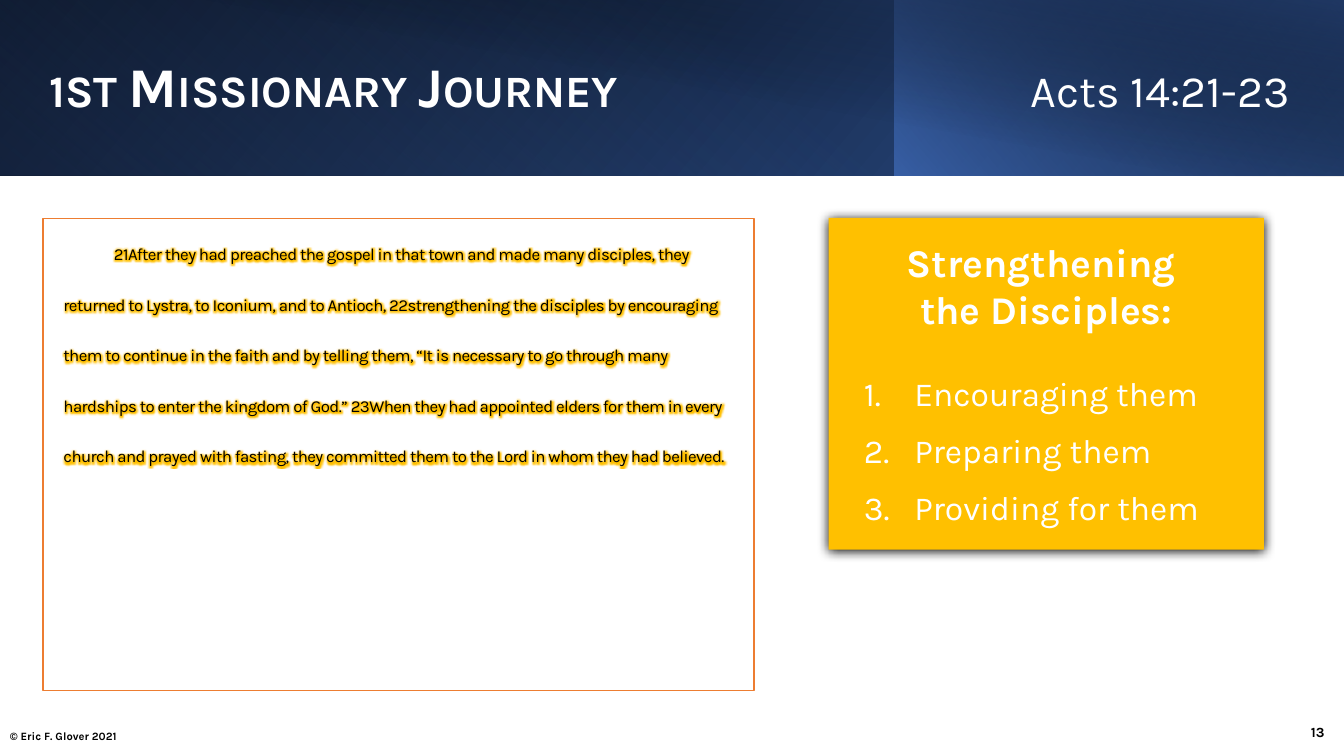
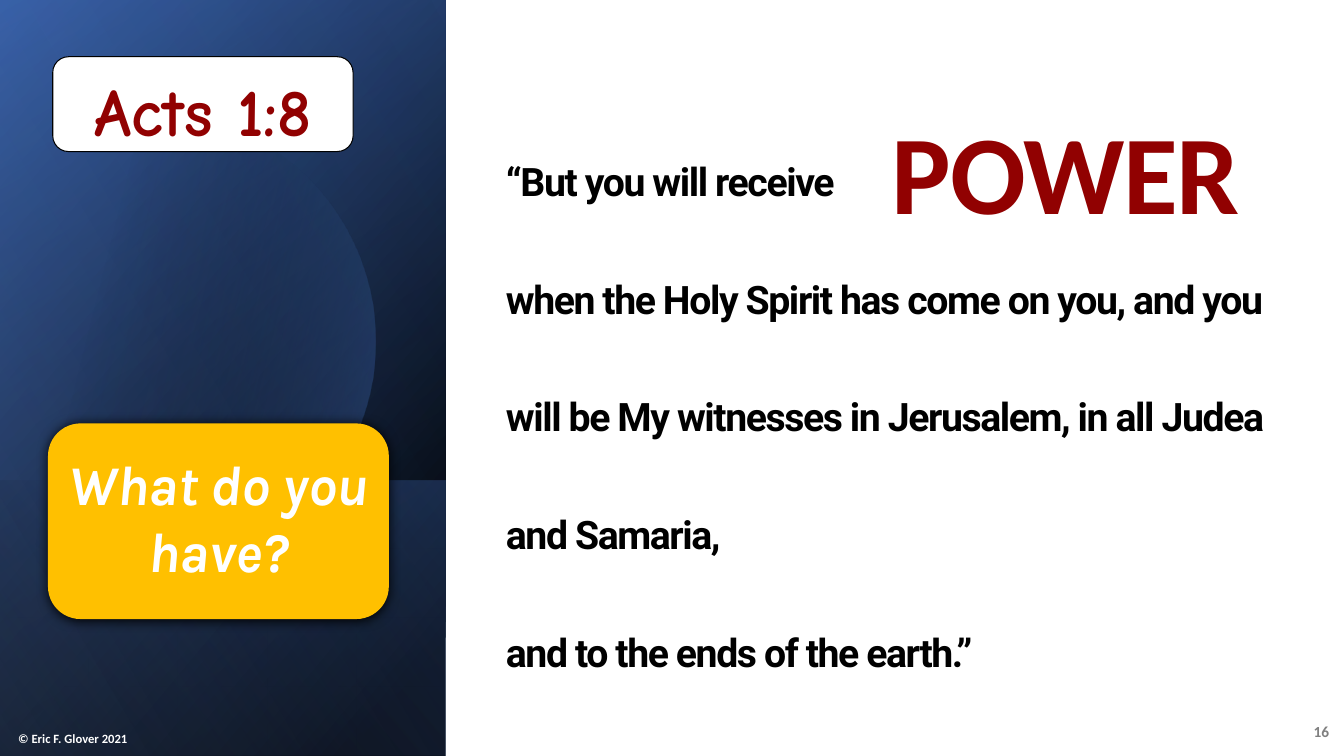
from math import acos, cos, sin

from pptx import Presentation
from pptx.dml.color import RGBColor as Rgb
from pptx.enum.shapes import MSO_SHAPE as Shp
from pptx.enum.text import MSO_ANCHOR as Anchor, MSO_AUTO_SIZE as Auto, PP_ALIGN as Al
from pptx.oxml import parse_xml
from pptx.oxml.ns import nsdecls
from pptx.util import Cm, Pt

COLORS = {
    "white": "FFFFFF", "black": "000000", "gold": "FFC000", "orange": "ED7D31",
    "red": "910101", "gray": "808080", "blue": "4472C4", "royal": "2F5597",
    "navy": "203864", "sky": "8FAADC",
}
CREDIT = "© Eric F. Glover 2021"


def rgb(name):
    return Rgb.from_string(COLORS[name])


def xml(tag, attrs="", inner=""):
    return parse_xml(f"<a:{tag} {nsdecls('a')} {attrs}>{inner}</a:{tag}>")


def color_xml(name, alpha=100):
    return f'<a:srgbClr val="{COLORS[name]}"><a:alpha val="{alpha * 1000}"/></a:srgbClr>'


class Deck:
    def __init__(self):
        self.prs = Presentation()
        self.prs.slide_width, self.prs.slide_height = Cm(33.87), Cm(19.05)
        self.s = None

    def slide(self):
        self.s = self.prs.slides.add_slide(self.prs.slide_layouts[1])

    def shape(self, box, fill=None, line=None, width=1, kind=Shp.RECTANGLE, shadow=False):
        sp = self.s.shapes.add_shape(kind, *map(Cm, box))
        sp.shadow.inherit = False
        if fill:
            sp.fill.solid()
            sp.fill.fore_color.rgb = rgb(fill)
        if line:
            sp.line.color.rgb = rgb(line)
            sp.line.width = Pt(width)
        else:
            sp.line.fill.background()
        if shadow:
            sp.element.spPr.find("{*}effectLst").append(xml(
                "outerShdw", f'blurRad="{Pt(8.5)}" dist="{Pt(1)}" dir="5400000" algn="t" rotWithShape="0"',
                color_xml("black")))
        return sp

    def gradient(self, sp, angle, *stops):
        inner = "".join(f'<a:gs pos="{pos * 1000}">{color_xml(name, alpha)}</a:gs>'
                        for pos, name, alpha in stops)
        grad = xml("gradFill", 'rotWithShape="1"',
                   f'<a:gsLst>{inner}</a:gsLst><a:lin ang="{angle * 60000}" scaled="0"/>')
        sp.fill.background()
        spPr = sp.element.spPr
        spPr.replace(spPr.find("{*}noFill"), grad)

    def band(self, box, angle, *stops):
        self.gradient(self.shape(box), angle, *stops)

    def disc(self, cx, cy, radius, angle, *stops):
        end = acos(-cx / radius)
        points = [(Cm(cx + radius * cos(t)), Cm(cy + radius * sin(t)))
                  for t in (-end + 2 * end * i / 90 for i in range(91))]
        builder = self.s.shapes.build_freeform(*points[0])
        builder.add_line_segments(points[1:])
        sp = builder.convert_to_shape()
        sp.shadow.inherit = False
        sp.line.fill.background()
        self.gradient(sp, angle, *stops)

    def placeholder(self, idx, box):
        sp = self.s.placeholders[idx]
        sp.left, sp.top, sp.width, sp.height = map(Cm, box)
        self.s.shapes.element.append(sp.element)
        return sp

    def textbox(self, box):
        return self.s.shapes.add_textbox(*map(Cm, box))

    def frame(self, sp, anchor=Anchor.MIDDLE, ins=(0.25, 0.13, 0.25, 0.13)):
        tf = sp.text_frame
        tf.word_wrap, tf.auto_size, tf.vertical_anchor = True, Auto.NONE, anchor
        tf.margin_left, tf.margin_top, tf.margin_right, tf.margin_bottom = map(Cm, ins)
        return tf

    def style(self, p, size, color, font="Karla", bold=True, italic=False, align=Al.LEFT,
              after=0, spacing=None, tracking=0):
        p.alignment, p.space_before, p.space_after = align, Pt(0), Pt(after)
        if spacing:
            p.line_spacing = spacing
        f = p.font
        f.name, f.size, f.bold, f.italic = font, Pt(size), bold, italic
        f.color.rgb = rgb(color)
        if tracking:
            p._p.pPr.defRPr.set("spc", str(round(tracking * 100)))

    def text(self, tf, text, size, color, **style):
        p = tf.paragraphs[0]
        p.text = text
        self.style(p, size, color, **style)
        return p

    def paragraph_xml(self, p, element):
        p._p.get_or_add_pPr().insert_element_before(element, "a:defRPr", "a:extLst")

    def indent(self, p, first, left=0):
        pPr = p._p.get_or_add_pPr()
        pPr.set("marL", str(Cm(left)))
        pPr.set("indent", str(Cm(first)))

    def split_title(self, box, left, right):
        tf = self.frame(self.placeholder(0, box), ins=(0.4, 0.13, 0.1, 0.13))
        p = tf.paragraphs[0]
        for text, size, bold in ((left + "\t", 40, True), (right, 32, False)):
            r = p.add_run()
            r.text, r.font.size, r.font.bold = text, Pt(size), bold
        p.runs[0]._r.get_or_add_rPr().set("cap", "small")
        self.style(p, 40, "white", spacing=0.9, after=6)
        self.paragraph_xml(p, xml("tabLst", "", f'<a:tab pos="{Cm(31.27)}" algn="r"/>'))

    def passage(self, box, text):
        sp = self.shape(box, "white", "orange", 1.25)
        tf = self.frame(sp, Anchor.TOP, (0.51, -0.12, 0.51, 0.13))
        p = self.text(tf, text, 12, "black", bold=False, spacing=Pt(36), tracking=-0.4)
        self.indent(p, 1.27)
        glow = f'<a:glow rad="{Pt(5)}">{color_xml("gold")}</a:glow>'
        p.runs[0]._r.get_or_add_rPr().append(xml("effectLst", "", glow))

    def numbered(self, box, items):
        tf = self.frame(self.placeholder(1, box), Anchor.TOP, (0.25, 0, 0.25, 0))
        for i, item in enumerate(items):
            p = tf.add_paragraph() if i else tf.paragraphs[0]
            p.text = item
            self.style(p, 24, "white", bold=False, after=12)
            self.indent(p, -1.27, 1.91)
            self.paragraph_xml(p, xml("buFont", 'typeface="+mj-lt"'))
            self.paragraph_xml(p, xml("buAutoNum", 'type="arabicPeriod"'))

    def footer(self, credit_box, credit_style, number_box, number, number_style):
        self.text(self.frame(self.textbox(credit_box)), CREDIT, **credit_style)
        self.text(self.frame(self.textbox(number_box)), number, align=Al.RIGHT, **number_style)


def journey(d):
    d.slide()
    d.band((0, 0, 33.87, 4.42), 40, (0, "black", 100), (100, "royal", 100))
    d.band((0, 0, 22.56, 4.42), 130, (20, "blue", 0), (100, "navy", 55))
    d.band((22.54, 0, 11.33, 4.42), 320, (0, "blue", 66), (100, "black", 30))
    d.band((1.27, 0, 32.6, 4.45), 280, (50, "black", 0), (99, "navy", 52))
    d.split_title((0.84, 0.81, 32.39, 2.87), "1st Missionary Journey", "Acts 14:21-23")
    d.passage((1.09, 5.51, 17.91, 11.89),
              "21After they had preached the gospel in that town and made many disciples, "
              "they returned to Lystra, to Iconium, and to Antioch, 22strengthening the "
              "disciples by encouraging them to continue in the faith and by telling them, "
              "“It is necessary to go through many hardships to enter the kingdom of God.” "
              "23When they had appointed elders for them in every church and prayed with "
              "fasting, they committed them to the Lord in whom they had believed.")
    card = d.shape((20.88, 5.49, 10.97, 8.36), "gold", shadow=True)
    d.text(d.frame(card, Anchor.TOP, (0.25, 0.51, 0.25, 0.25)),
           "Strengthening \vthe Disciples:", 28, "white", align=Al.CENTER)
    d.numbered((20.88, 9.39, 10.97, 4.46),
               ("Encouraging them", "Preparing them", "Providing for them"))
    d.footer((0, 18.03, 7.62, 1.02), dict(size=8, color="black"),
             (32.39, 17.93, 1.24, 1.02), "13", dict(size=10, color="black"))


def power(d):
    d.slide()
    d.shape((0, 0, 33.87, 19.05), "white")
    panel = (0, 0, 11.23, 19.05)
    d.band(panel, 220, (8, "black", 100), (100, "royal", 100))
    d.band(panel, 240, (0, "black", 0), (99, "blue", 46))
    d.band((0, 12.11, 11.23, 6.94), 140, (2, "blue", 29), (100, "black", 30))
    d.disc(3.65, 8.61, 5.82, 14, (29, "black", 0), (100, "blue", 43))
    d.band(panel, 150, (0, "black", 0), (99, "sky", 11))
    verse = d.frame(d.placeholder(1, (12.5, 1.95, 20.12, 15.42)), ins=(0.25, 0, 0.25, 0.13))
    p = d.text(verse,
               "“But you will receive\vwhen the Holy Spirit has come on you, and you will be "
               "My witnesses in Jerusalem, in all Judea and Samaria, \v"
               "and to the ends of the earth.”",
               28, "black", font="Roboto", spacing=2.5, after=6, tracking=-1)
    d.indent(p, 0)
    d.paragraph_xml(p, xml("buNone"))
    reference = (1.33, 1.43, 7.57, 2.39)
    d.shape(reference, "white", "black", 0.75, Shp.ROUNDED_RECTANGLE)
    d.text(d.frame(d.placeholder(0, reference), ins=(0.25, 0.25, 0.25, 0)),
           "Acts 1:8", 48, "red", font="Comic Neue", align=Al.CENTER, after=6)
    d.text(d.frame(d.textbox((22.23, 2.46, 11.6, 3.68)), Anchor.TOP),
           "POWER", 80, "red", font="Calibri", tracking=-1)
    prompt = d.shape((1.21, 10.67, 8.59, 4.93), "gold", kind=Shp.ROUNDED_RECTANGLE, shadow=True)
    d.text(d.frame(prompt, ins=(0.25, 0, 0.25, 0.25)),
           "What do you have?", 40, "white", italic=True, align=Al.CENTER)
    d.footer((0.21, 18.26, 3.99, 0.71), dict(size=9, color="white", font="Calibri"),
             (32.51, 17.93, 1.24, 1.02), "16", dict(size=11, color="gray", font="Calibri"))


def main():
    d = Deck()
    journey(d)
    power(d)
    d.prs.save("out.pptx")


if __name__ == "__main__":
    main()
